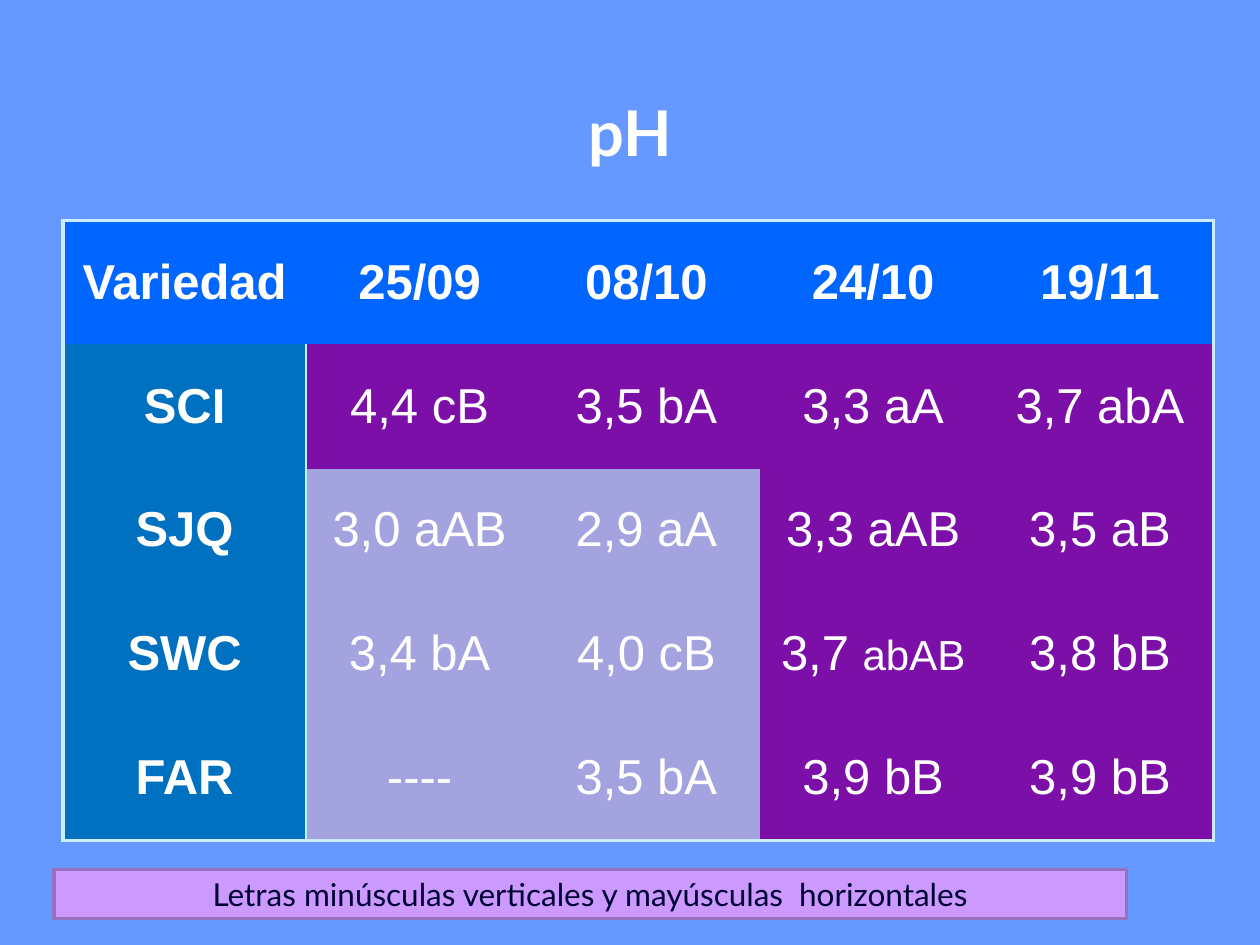
from lxml.etree import SubElement
from pptx import Presentation
from pptx.dml.color import RGBColor
from pptx.enum.shapes import MSO_SHAPE
from pptx.enum.text import MSO_ANCHOR, PP_ALIGN
from pptx.oxml.ns import qn
from pptx.util import Inches, Pt

COLORS = {
    "background": "6699FF",
    "white": "FFFFFF",
    "header": "0066FF",
    "variety": "0070C0",
    "dark": "7D0FA9",
    "light": "A3A3E0",
    "border": "CCECFF",
    "note": "CC99FF",
    "note_line": "9771BD",
    "note_text": "000033",
}
HEADING_FONT = "Lato"
TABLE_FONT = "Arial"
OUTER_BORDER = 2.25
INNER_BORDER = 1

COLUMN_WIDTHS = [1.93, 1.8, 1.8, 1.8, 1.8]
ROW_HEIGHTS = [0.98, 0.99, 0.97, 0.99, 0.99]
PH_ROWS = [
    ["Variedad", "25/09", "08/10", "24/10", "19/11"],
    ["SCI", "4,4 cB", "3,5 bA", "3,3 aA", "3,7 abA"],
    ["SJQ", "3,0 aAB", "2,9 aA", "3,3 aAB", "3,5 aB"],
    ["SWC", "3,4 bA", "4,0 cB", [("3,7 ", 28), ("abAB", 24)], "3,8 bB"],
    ["FAR", "----", "3,5 bA", "3,9 bB", "3,9 bB"],
]


def cell_color(row, column):
    if row == 0:
        return "header"
    if column == 0:
        return "variety"
    return "light" if row > 1 and column < 3 else "dark"


def cell_borders(row, column):
    """Return the width in points of each visible side of a cell."""
    borders = {}
    if column == 0:
        borders["L"] = OUTER_BORDER
    if column == len(COLUMN_WIDTHS) - 1:
        borders["R"] = OUTER_BORDER
    if row == 0:
        borders["T"] = OUTER_BORDER
    if row == len(ROW_HEIGHTS) - 1:
        borders["B"] = OUTER_BORDER
    if row > 0 and column == 0:
        borders["R"] = INNER_BORDER
    if row > 0 and column == 1:
        borders["L"] = INNER_BORDER
    return borders


class SlideBuilder:
    def __init__(self, slide):
        self.slide = slide

    def color(self, name):
        return RGBColor.from_string(COLORS[name])

    def fill(self, target, name):
        target.fill.solid()
        target.fill.fore_color.rgb = self.color(name)

    def add_text(self, text_frame, runs, font, color, bold=False):
        """Fill a frame with one centred paragraph of (text, size) runs."""
        text_frame.word_wrap = True
        paragraph = text_frame.paragraphs[0]
        paragraph.alignment = PP_ALIGN.CENTER
        for text, size in runs:
            run = paragraph.add_run()
            run.text = text
            run.font.name = font
            run.font.size = Pt(size)
            run.font.bold = bold
            run.font.color.rgb = self.color(color)

    def title(self, text, left, top, width, height):
        box = self.slide.shapes.add_textbox(
            Inches(left), Inches(top), Inches(width), Inches(height))
        box.text_frame.vertical_anchor = MSO_ANCHOR.BOTTOM
        self.add_text(box.text_frame, [(text, 36)], HEADING_FONT, "white", bold=True)

    def note(self, text, left, top, width, height):
        shape = self.slide.shapes.add_shape(
            MSO_SHAPE.RECTANGLE,
            Inches(left), Inches(top), Inches(width), Inches(height))
        shape.shadow.inherit = False
        self.fill(shape, "note")
        shape.line.color.rgb = self.color("note_line")
        shape.line.width = Pt(2)
        shape.text_frame.vertical_anchor = MSO_ANCHOR.MIDDLE
        self.add_text(shape.text_frame, [(text, 18)], HEADING_FONT, "note_text")

    def draw_borders(self, cell, borders):
        """Draw the given sides and hide the others; call before filling."""
        properties = cell._tc.get_or_add_tcPr()
        for side in "LRTB":
            line = SubElement(properties, qn(f"a:ln{side}"))
            if side in borders:
                line.set("w", str(Pt(borders[side])))
                solid = SubElement(line, qn("a:solidFill"))
                SubElement(solid, qn("a:srgbClr"), val=COLORS["border"])
            else:
                SubElement(line, qn("a:noFill"))

    def table(self, rows, left, top):
        frame = self.slide.shapes.add_table(
            len(ROW_HEIGHTS), len(COLUMN_WIDTHS), Inches(left), Inches(top),
            Inches(sum(COLUMN_WIDTHS)), Inches(sum(ROW_HEIGHTS)))
        table = frame.table
        table.horz_banding = False
        for column, width in zip(table.columns, COLUMN_WIDTHS):
            column.width = Inches(width)
        for row, height in zip(table.rows, ROW_HEIGHTS):
            row.height = Inches(height)
        for row, values in enumerate(rows):
            for column, value in enumerate(values):
                cell = table.cell(row, column)
                self.draw_borders(cell, cell_borders(row, column))
                self.fill(cell, cell_color(row, column))
                cell.vertical_anchor = MSO_ANCHOR.MIDDLE
                runs = [(value, 28)] if isinstance(value, str) else value
                self.add_text(cell.text_frame, runs, TABLE_FONT, "white",
                              bold=row == 0 or column == 0)


def main():
    presentation = Presentation()
    presentation.slide_width = Inches(10)
    presentation.slide_height = Inches(7.5)
    slide = presentation.slides.add_slide(presentation.slide_layouts[6])
    builder = SlideBuilder(slide)
    builder.fill(slide.background, "background")
    builder.title("pH", 0.5, 0.3, 9, 1.09)
    builder.table(PH_ROWS, 0.5, 1.75)
    builder.note("Letras minúsculas verticales y mayúsculas  horizontales",
                 0.43, 6.9, 8.51, 0.39)
    presentation.save("out.pptx")


if __name__ == "__main__":
    main()
